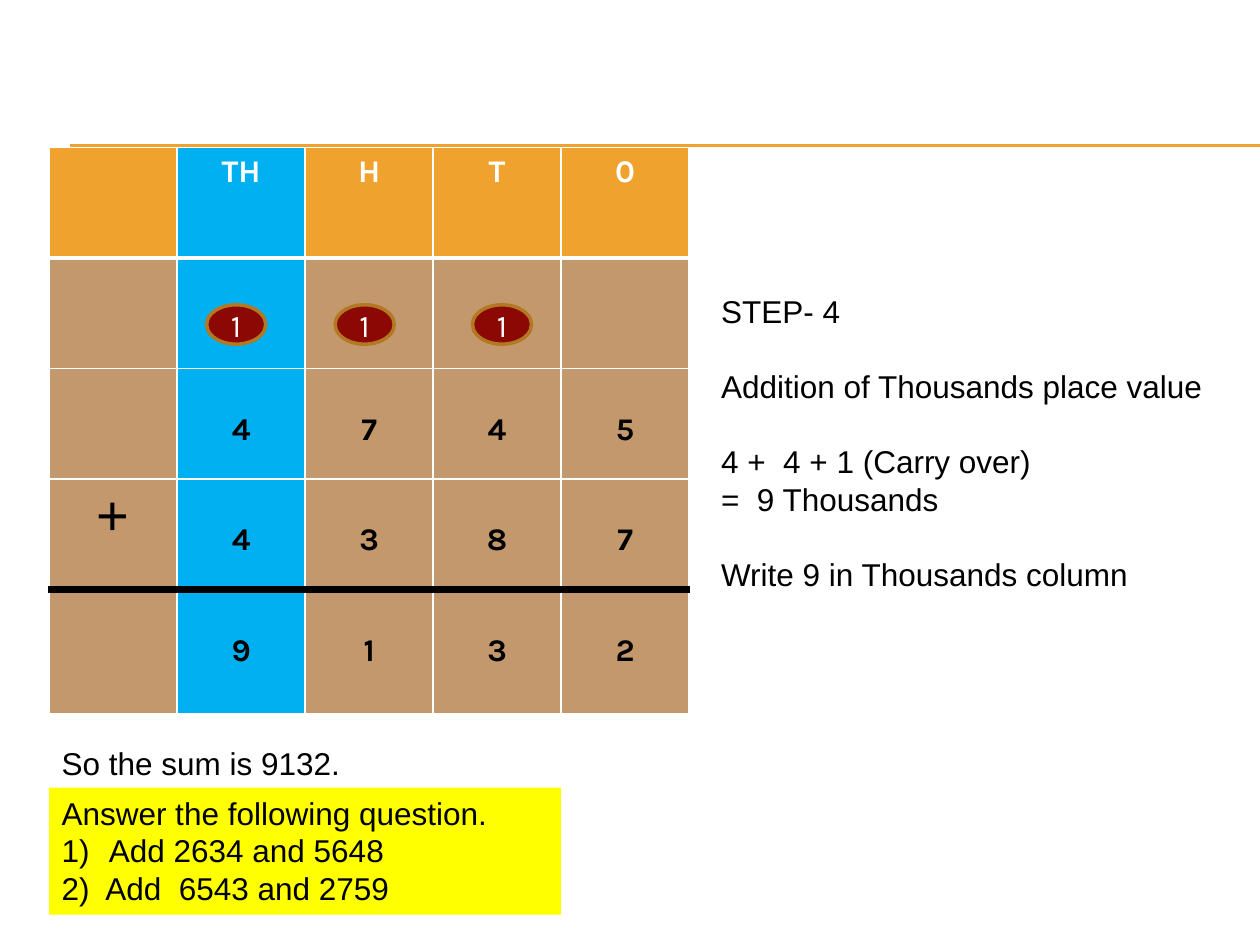
from lxml import etree
from pptx import Presentation
from pptx.dml.color import RGBColor
from pptx.enum.shapes import MSO_CONNECTOR, MSO_SHAPE
from pptx.enum.text import MSO_ANCHOR, PP_ALIGN
from pptx.oxml.ns import qn
from pptx.util import Pt

LEFT, MID = PP_ALIGN.LEFT, PP_ALIGN.CENTER
OVAL, RECT = MSO_SHAPE.OVAL, MSO_SHAPE.RECTANGLE
STRAIGHT = MSO_CONNECTOR.STRAIGHT
BLACK = RGBColor(0x00, 0x00, 0x00)
WHITE = RGBColor(0xFF, 0xFF, 0xFF)
ORANGE = RGBColor(0xF0, 0xA2, 0x2E)
TAN = RGBColor(0xC3, 0x98, 0x6D)
BLUE = RGBColor(0x00, 0xB0, 0xF0)
RED = RGBColor(0x8B, 0x08, 0x05)
BROWN = RGBColor(0xB2, 0x78, 0x22)
YELLOW = RGBColor(0xFF, 0xFF, 0x00)

LINE = 21.5  # line pitch of the Arial text
HANG = 27

# Each line: text, then its options
STEPS = [
    ("STEP- 4", {}),
    ("Addition of Thousands place value", {"gap": LINE}),
    ("4 +  4 + 1 (Carry over)", {"gap": LINE, "hang": HANG}),
    ("=  9 Thousands", {"hang": HANG}),
    ("Write 9 in Thousands column", {"gap": LINE, "hang": HANG}),
]
TOTAL = [("So the sum is 9132.", {})]
TASKS = [
    ("Answer the following question.", {"hang": HANG}),
    ("Add 2634 and 5648", {"hang": HANG, "number": True}),
    ("2)  Add  6543 and 2759", {"hang": HANG}),
]
SUM = [
    ["", "TH", "H", "T", "0"],
    ["", "", "", "", ""],
    ["", "4", "7", "4", "5"],
    ["+", "4", "3", "8", "7"],
    ["", "9", "1", "3", "2"],
]
ACTIVE = 1  # the thousands column
TABLE = (28.1, 84.24, 365.75, 324)
ROWS = [63.15] * 4 + [71.4]
EDGES = [(WHITE, 1), (WHITE, 3), (WHITE, 1), (WHITE, 1), (BLACK, 4.5), (WHITE, 1)]
CARRY = [270, 191.5, 118.1]  # left sides of the carried ones
RULES = [82.8, 83.5]


def put(frame, lines, font="Arial", size=18, color=BLACK, bold=False,
        align=LEFT, pitch=None):
    frame.word_wrap = True
    for i, (words, opts) in enumerate(lines):
        para = frame.paragraphs[0] if i == 0 else frame.add_paragraph()
        para.alignment = align
        if pitch:
            para.line_spacing = Pt(pitch)
        if "gap" in opts:
            para.space_before = Pt(opts["gap"])
        props = para._p.get_or_add_pPr()
        if "hang" in opts:
            props.set("marL", str(Pt(opts["hang"])))
            props.set("indent", str(-Pt(opts["hang"])))
        if opts.get("number"):
            etree.SubElement(props, qn("a:buAutoNum"), type="arabicParenR")
        run = para.add_run()
        run.text = words
        run.font.name, run.font.size = font, Pt(size)
        run.font.bold, run.font.color.rgb = bold, color


def edge(cell, side, color, width):
    """Draw one border of a cell; call before the fill is set."""
    line = etree.SubElement(cell._tc.get_or_add_tcPr(), qn("a:" + side),
                            w=str(Pt(width)))
    fill = etree.SubElement(line, qn("a:solidFill"))
    etree.SubElement(fill, qn("a:srgbClr"), val=str(color))


def add_box(shapes, kind, box, fill):
    shape = shapes.add_shape(kind, *map(Pt, box))
    shape.shadow.inherit = False
    shape.fill.solid()
    shape.fill.fore_color.rgb = fill
    shape.line.fill.background()
    return shape


def add_rule(shapes, y):
    rule = shapes.add_connector(STRAIGHT, Pt(40.3), Pt(y), Pt(720), Pt(y))
    rule.line.color.rgb, rule.line.width = ORANGE, Pt(0.75)
    etree.SubElement(rule._element.spPr, qn("a:effectLst"))


def add_sum(shapes):
    table = shapes.add_table(len(SUM), len(SUM[0]), *map(Pt, TABLE)).table
    for col in table.columns:
        col.width = Pt(TABLE[2] / len(SUM[0]))
    for r, row in enumerate(SUM):
        table.rows[r].height = Pt(ROWS[r])
        for c, words in enumerate(row):
            cell = table.cell(r, c)
            edge(cell, "lnL", WHITE, 1)
            edge(cell, "lnR", WHITE, 1)
            edge(cell, "lnT", *EDGES[r])
            edge(cell, "lnB", *EDGES[r + 1])
            cell.fill.solid()
            cell.fill.fore_color.rgb = (
                BLUE if c == ACTIVE else ORANGE if r == 0 else TAN)
            if words == "+":
                put(cell.text_frame, [(words, {})], size=32, align=MID)
            elif words:
                put(cell.text_frame, [(words, {})], font="Karla", bold=True,
                    color=BLACK if r else WHITE, align=MID)
                if r:
                    cell.margin_top = Pt(24.6)


def add_text(shapes, box, lines):
    put(shapes.add_textbox(*map(Pt, box)).text_frame, lines, pitch=LINE)


def main():
    deck = Presentation()
    deck.slide_width, deck.slide_height = Pt(720), Pt(540)
    shapes = deck.slides.add_slide(deck.slide_layouts[6]).shapes

    for y in RULES:
        add_rule(shapes, y)
    add_text(shapes, (405, 163.4, 304, 181.4), STEPS)
    add_sum(shapes)
    for x in CARRY:
        oval = add_box(shapes, OVAL, (x, 174.2, 33.8, 22.5), RED)
        oval.line.color.rgb, oval.line.width = BROWN, Pt(2)
        oval.text_frame.vertical_anchor = MSO_ANCHOR.MIDDLE
        put(oval.text_frame, [("1", {})], font="Karla", color=WHITE, align=MID)
    add_text(shapes, (28.1, 422, 270, 28.8), TOTAL)
    tasks = add_box(shapes, RECT, (28.1, 450, 292.4, 72.7), YELLOW)
    tasks.text_frame.vertical_anchor = MSO_ANCHOR.TOP
    put(tasks.text_frame, TASKS, pitch=LINE)

    deck.save("out.pptx")


if __name__ == "__main__":
    main()
